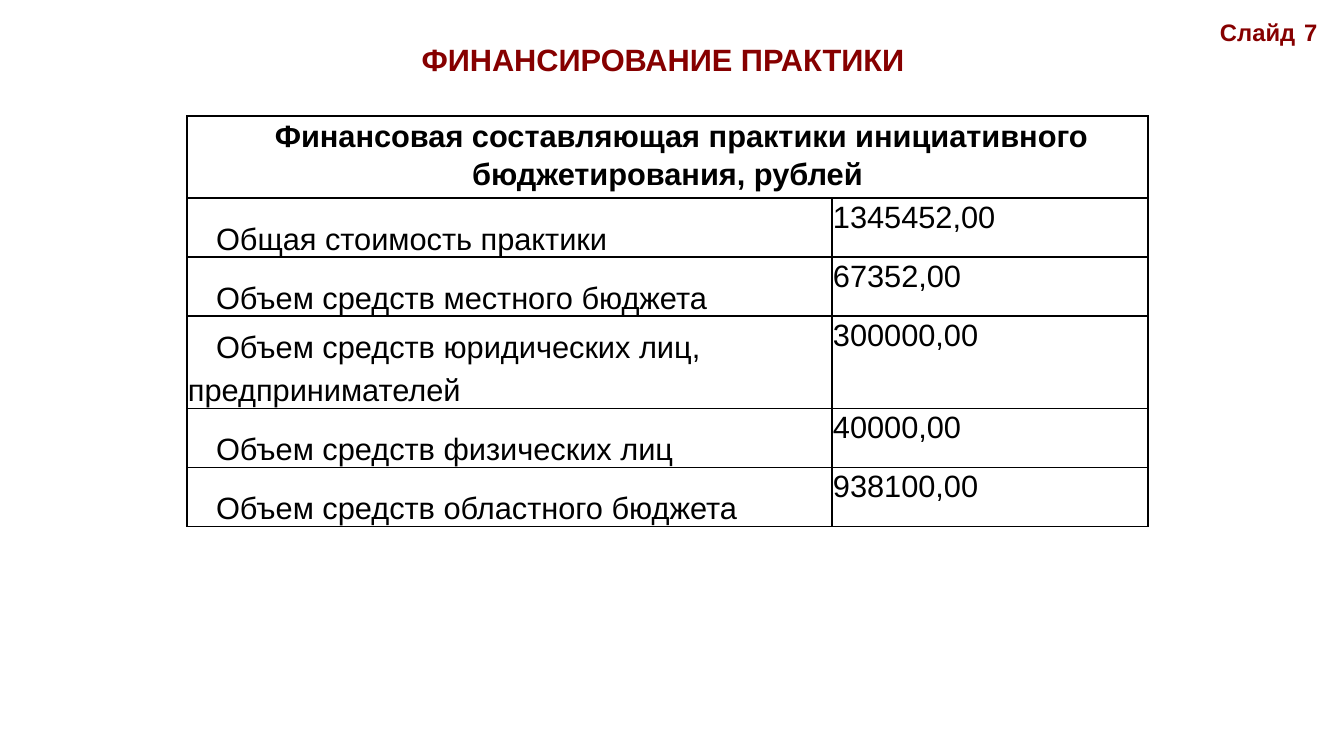
from lxml import etree
from pptx import Presentation
from pptx.dml.color import RGBColor
from pptx.enum.text import MSO_ANCHOR, PP_ALIGN
from pptx.oxml.ns import qn
from pptx.util import Pt

PX = 914400 / 100.8
CENTER, LEFT = PP_ALIGN.CENTER, PP_ALIGN.LEFT
TOP, BOTTOM = MSO_ANCHOR.TOP, MSO_ANCHOR.BOTTOM
COLORS = {"accent": "860000", "text": "000000", "cell": "FFFFFF"}
FONT = "Arial"
INDENT = 28

HEADING = "Финансовая составляющая практики инициативного бюджетирования, рублей"
COSTS = [
    ("Общая стоимость практики", "1345452,00"),
    ("Объем средств местного бюджета", "67352,00"),
    ("Объем средств юридических лиц, предпринимателей", "300000,00"),
    ("Объем средств физических лиц", "40000,00"),
    ("Объем средств областного бюджета", "938100,00"),
]


def px(n):
    return round(n * PX)


def rgb(name):
    return RGBColor.from_string(COLORS[name])


class Deck:
    def __init__(self):
        self.prs = Presentation()
        self.prs.slide_width, self.prs.slide_height = px(1344), px(756)
        self.s = self.prs.slides.add_slide(self.prs.slide_layouts[6])

    def style(self, p, size, color, bold=False, align=LEFT, spacing=1.0):
        p.alignment, p.line_spacing = align, spacing
        f = p.font
        f.name, f.size, f.bold = FONT, Pt(size), bold
        f.color.rgb = rgb(color)

    def text(self, box, runs, size, align=LEFT, spacing=1.0, inset=0):
        """Add a line of bold accent text; runs are (text, letter spacing in 1/100 pt)."""
        tf = self.s.shapes.add_textbox(*map(px, box)).text_frame
        tf.word_wrap = True
        tf.margin_left = tf.margin_right = px(inset)
        tf.margin_top = tf.margin_bottom = px(inset // 2)
        p = tf.paragraphs[0]
        for words, tracking in runs:
            r = p.add_run()
            r.text = words
            if tracking:
                r.font._element.set("spc", str(tracking))
        self.style(p, size, "accent", True, align, spacing)

    def cell(self, cell, words, spacing, bold=False, align=LEFT, anchor=TOP, indent=0):
        cell.margin_left = cell.margin_right = px(1)
        cell.margin_top = cell.margin_bottom = 0
        cell.vertical_anchor = anchor
        p = cell.text_frame.paragraphs[0]
        p.text = words
        self.style(p, 22, "text", bold, align, spacing)
        p._p.get_or_add_pPr().set("indent", str(px(indent)))

    def border(self, cell):
        """Fill the cell and rule all four sides."""
        tc_pr = cell._tc.get_or_add_tcPr()
        for side in ("a:lnL", "a:lnR", "a:lnT", "a:lnB"):
            ln = etree.SubElement(tc_pr, qn(side), w=str(Pt(1)))
            fill = etree.SubElement(ln, qn("a:solidFill"))
            etree.SubElement(fill, qn("a:srgbClr"), val=COLORS["text"])
        cell.fill.solid()
        cell.fill.fore_color.rgb = rgb("cell")

    def table(self, left, top, widths, heights, heading, rows):
        t = self.s.shapes.add_table(
            len(heights), len(widths), px(left), px(top), px(sum(widths)), px(sum(heights))
        ).table
        t.first_row = t.horz_banding = False
        for col, width in zip(t.columns, widths):
            col.width = px(width)
        for row, height in zip(t.rows, heights):
            row.height = px(height)
        for cell in t.iter_cells():
            self.border(cell)
        t.cell(0, 0).merge(t.cell(0, len(widths) - 1))
        self.cell(t.cell(0, 0), heading, 1.1, bold=True, align=CENTER, indent=INDENT)
        for i, (label, amount) in enumerate(rows, 1):
            self.cell(t.cell(i, 0), label, 1.25, anchor=BOTTOM, indent=INDENT)
            self.cell(t.cell(i, 1), amount, 1.07)


def main():
    deck = Deck()
    deck.text((17, 36, 1292, 47), [("ФИНАНСИРОВАНИЕ ПРАКТИКИ", 0)], 22, CENTER, inset=10)
    deck.text((1220, 21, 116, 26), [("Слайд", 0), (" 7", 150)], 17, spacing=0.9)
    deck.table(187, 116, [645, 316], [82, 59, 59, 92, 59, 59], HEADING, COSTS)
    deck.prs.save("out.pptx")


if __name__ == "__main__":
    main()
